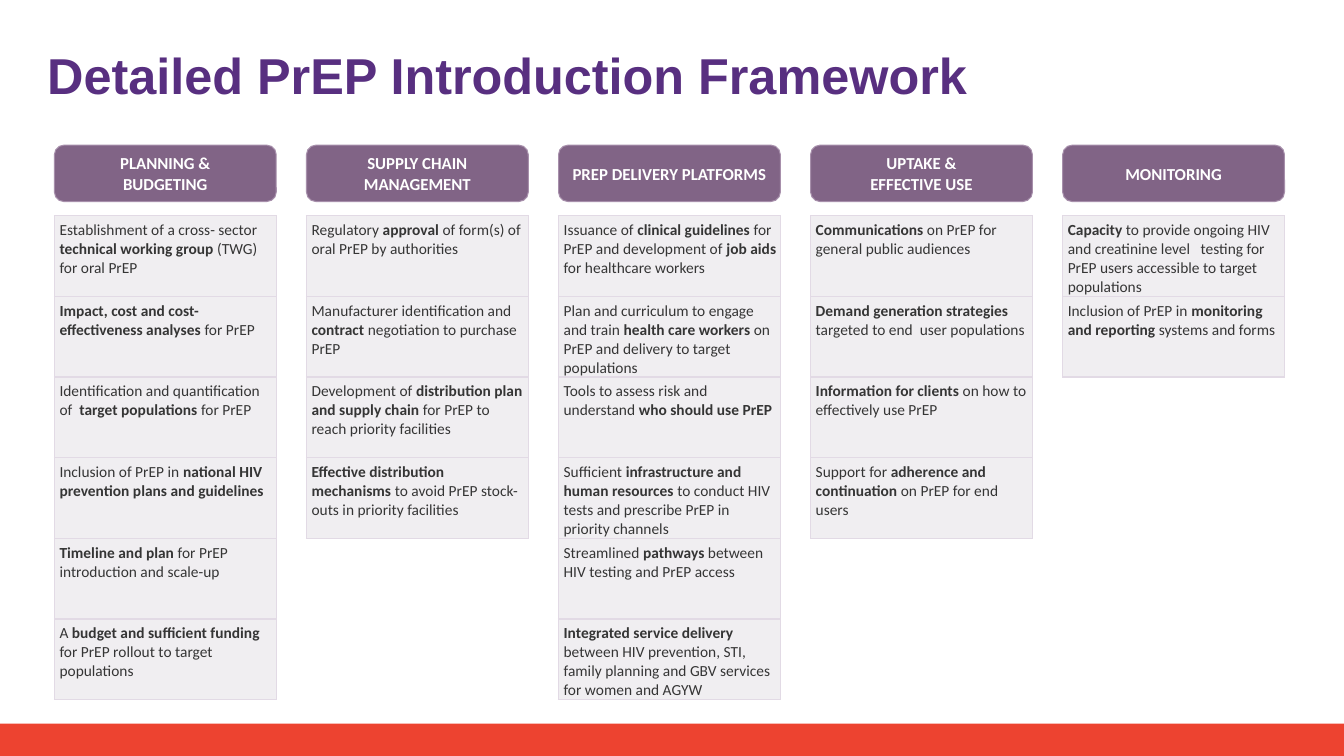
from dataclasses import dataclass
from pptx import Presentation, util as u
from pptx.dml.color import RGBColor
from pptx.enum import shapes, text
from pptx.oxml import parse_xml
from pptx.oxml.ns import nsdecls


@dataclass(frozen=True)
class Theme:
    title: str = "582F80"
    head: str = "816486"
    edge: str = "A78FAB"
    cell: str = "F0EEF1"
    rule: str = "E2DAE5"
    ink: str = "353535"
    white: str = "FFFFFF"
    foot: str = "ED4330"
    face: str = "Calibri"
    big: int = 36
    mid: int = 12
    small: int = 11


T = Theme()
WIDE, HIGH = 13.33, 7.5
LEFT, STEP, COL = 0.54, 2.5, 2.2
TOP, HEAD, GAP, ROW = 1.44, 0.56, 0.14, 0.8

PILLARS = [
    ("PLANNING &\nBUDGETING", [
        "Establishment of a cross- sector *technical working group *(TWG) for oral PrEP",
        "*Impact, cost and cost-effectiveness analyses* for PrEP",
        "Identification and quantification of  *target populations *for PrEP",
        "Inclusion of PrEP in *national HIV prevention plans and guidelines*",
        "*Timeline and plan* for PrEP introduction and scale-up",
        "A *budget and sufficient funding* for PrEP rollout to target populations",
    ]),
    ("SUPPLY CHAIN MANAGEMENT", [
        "Regulatory *approval *of form(s) of oral PrEP by authorities",
        "Manufacturer identification and *contract *negotiation to purchase PrEP",
        "Development of *distribution plan and supply chain *for PrEP to reach priority facilities",
        "*Effective distribution mechanisms* to avoid PrEP stock-outs in priority facilities",
    ]),
    ("PREP DELIVERY PLATFORMS", [
        "Issuance of *clinical guidelines *for PrEP and development of *job aids *for healthcare workers",
        "Plan and curriculum to engage and train *health care workers *on PrEP "
        "and delivery to target populations",
        "Tools to assess risk and understand *who should use PrEP*",
        "Sufficient *infrastructure and human resources *to conduct HIV tests "
        "and prescribe PrEP in priority channels",
        "Streamlined *pathways *between HIV testing and PrEP access",
        "*Integrated service delivery *between HIV prevention, STI, family planning "
        "and GBV services for women and AGYW",
    ]),
    ("UPTAKE &\nEFFECTIVE USE", [
        "*Communications *on PrEP for general public audiences",
        "*Demand generation strategies *targeted to end  user populations",
        "*Information for clients *on how to effectively use PrEP",
        "Support for *adherence and continuation *on PrEP for end users",
    ]),
    ("MONITORING", [
        "*Capacity *to provide ongoing HIV and creatinine level   testing for PrEP users "
        "accessible to target populations",
        "Inclusion of PrEP in *monitoring and reporting *systems and forms",
    ]),
]


def box(*sides):
    return [u.Inches(side) for side in sides]


def paint(fill, color):
    fill.solid()
    fill.fore_color.rgb = RGBColor.from_string(color)


def style(para, size, color, face=T.face, bold=None):
    font = para.font
    font.size, font.name, font.bold = u.Pt(size), face, bold
    font.color.rgb = RGBColor.from_string(color)


def footer(slide, x, y, w, h):
    band = slide.shapes.add_shape(shapes.MSO_SHAPE.RECTANGLE, *box(x, y, w, h))
    band.shadow.inherit = False
    paint(band.fill, T.foot)
    band.line.fill.background()


def title(slide, words, x, y, w, h):
    frame = slide.shapes.add_textbox(*box(x, y, w, h)).text_frame
    frame.word_wrap = True
    frame.vertical_anchor = text.MSO_ANCHOR.BOTTOM
    para = frame.paragraphs[0]
    para.text = words
    para.line_spacing = 0.9
    style(para, T.big, T.title, "Arial", True)


def header(slide, words, x, y, w, h):
    tab = slide.shapes.add_shape(shapes.MSO_SHAPE.ROUNDED_RECTANGLE, *box(x, y, w, h))
    tab.shadow.inherit = False
    paint(tab.fill, T.head)
    paint(tab.line.fill, T.edge)
    tab.line.width = u.Pt(0.75)
    frame = tab.text_frame
    frame.text = words
    frame.word_wrap = True
    frame.vertical_anchor = text.MSO_ANCHOR.MIDDLE
    for para in frame.paragraphs:
        para.alignment = text.PP_ALIGN.CENTER
        style(para, T.mid, T.white, bold=True)


def border(cell):
    props = cell._tc.get_or_add_tcPr()
    for side in "LRTB":
        props.append(parse_xml(
            f'<a:ln{side} {nsdecls("a")} w="{u.Pt(1)}"><a:solidFill>'
            f'<a:srgbClr val="{T.rule}"/></a:solidFill></a:ln{side}>'))


def entry(cell, words):
    border(cell)
    paint(cell.fill, T.cell)
    cell.margin_left, cell.margin_top, cell.margin_right, cell.margin_bottom = box(0.05, 0.05, 0.01, 0)
    para = cell.text_frame.paragraphs[0]
    style(para, T.small, T.ink)
    for turn, part in enumerate(words.split("*")):
        if part:
            run = para.add_run()
            run.text = part
            run.font.bold = turn % 2 == 1


def tasks(slide, items, x, y, w, row):
    size = box(x, y, w, row * len(items))
    table = slide.shapes.add_table(len(items), 1, *size).table
    table.first_row = table.horz_banding = False
    for cell, words in zip(table.iter_cells(), items):
        entry(cell, words)


def pillar(slide, name, items, x, y, w):
    tasks(slide, items, x, y + HEAD + GAP, w, ROW)
    header(slide, name, x, y, w, HEAD)


def main():
    deck = Presentation()
    deck.slide_width, deck.slide_height = box(WIDE, HIGH)
    slide = deck.slides.add_slide(deck.slide_layouts[6])
    footer(slide, 0, 7.18, WIDE, HIGH - 7.18)
    title(slide, "Detailed PrEP Introduction Framework", 0.37, 0.23, 11.5, 0.87)
    for place, (name, items) in enumerate(PILLARS):
        pillar(slide, name, items, LEFT + place * STEP, TOP, COL)
    deck.save("out.pptx")


if __name__ == "__main__":
    main()
